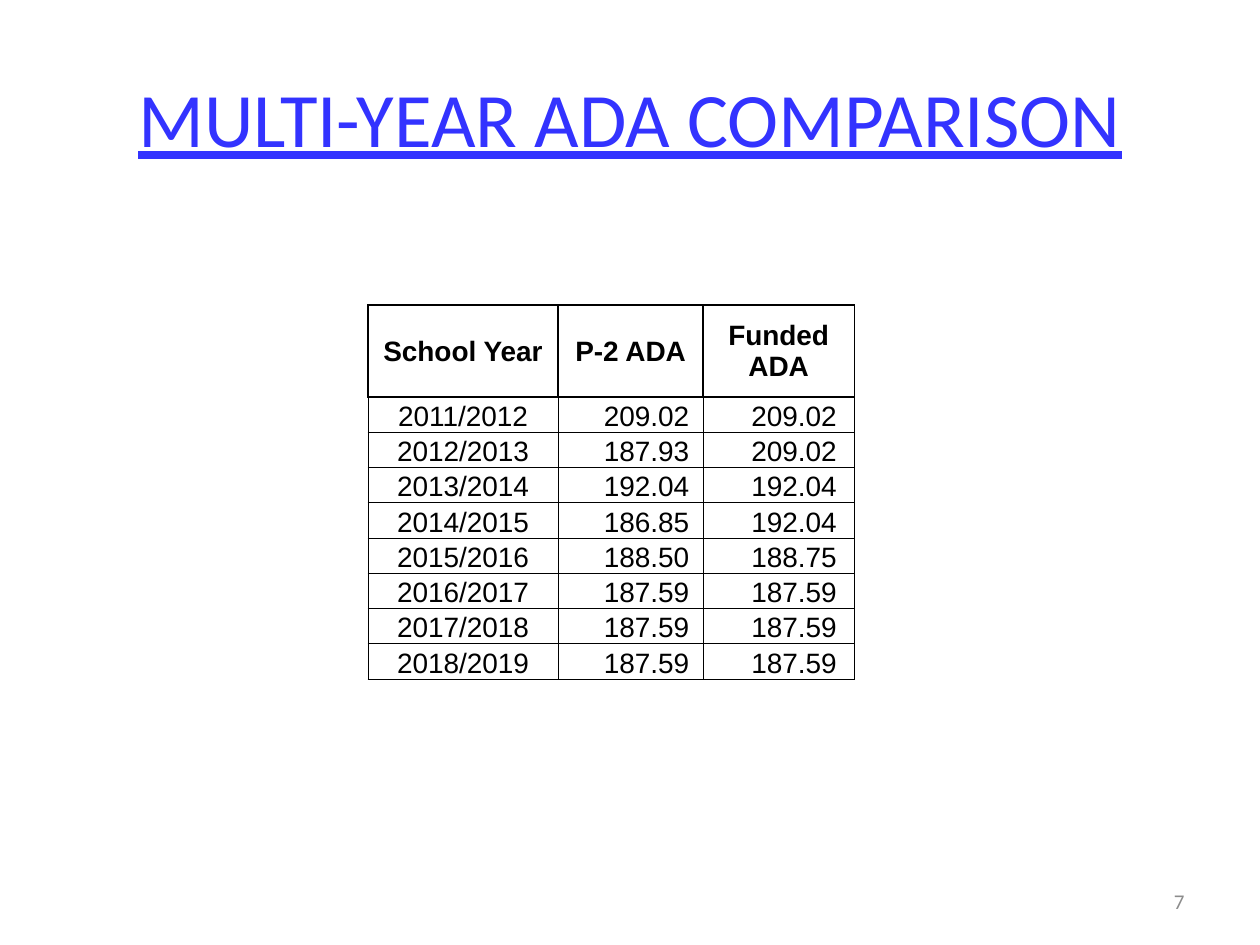
from dataclasses import dataclass

import pptx
import pptx.dml.color
import pptx.enum.text
import pptx.oxml
import pptx.oxml.ns
import pptx.util

Inches = pptx.util.Inches
Pt = pptx.util.Pt
Align = pptx.enum.text.PP_ALIGN
Anchor = pptx.enum.text.MSO_ANCHOR


@dataclass
class Style:
    size: float
    font: str = "Arial"
    color: str = "000000"
    align: Align = Align.CENTER
    bold: bool = False
    under: bool = False


@dataclass
class Column:
    head: str
    width: float
    align: Align
    right: float


YEARS = [f"{year}/{year + 1}" for year in range(2011, 2019)]
P2 = [209.02, 187.93, 192.04, 186.85, 188.50, 187.59, 187.59, 187.59]
FUNDED = [209.02, 209.02, 192.04, 192.04, 188.75, 187.59, 187.59, 187.59]
COLUMNS = [
    Column("School Year", 1.51, Align.CENTER, 0.01),
    Column("P-2 ADA", 1.15, Align.RIGHT, 0.11),
    Column("Funded ADA", 1.2, Align.RIGHT, 0.14),
]
HEAD, ROW = 0.73, 0.28


def rgb(code: str) -> pptx.dml.color.RGBColor:
    return pptx.dml.color.RGBColor.from_string(code)


def write(frame, text: str, style: Style) -> None:
    para = frame.paragraphs[0]
    para.alignment = style.align
    run = para.add_run()
    run.text = text
    form = {"name": style.font, "size": Pt(style.size),
            "bold": style.bold, "underline": style.under}
    for key, value in form.items():
        setattr(run.font, key, value)
    run.font.color.rgb = rgb(style.color)


def add_text(slide, box: tuple, text: str, style: Style) -> None:
    frame = slide.shapes.add_textbox(*map(Inches, box)).text_frame
    frame.word_wrap = True
    frame.vertical_anchor = Anchor.MIDDLE
    write(frame, text, style)


def add_edge(cell, side: str, width: float) -> None:
    """Draw one solid black border; sides are L, R, T and B."""
    space = pptx.oxml.ns.nsdecls("a")
    cell._tc.get_or_add_tcPr().append(pptx.oxml.parse_xml(
        f'<a:ln{side} {space} w="{Pt(width)}"><a:solidFill>'
        f'<a:srgbClr val="000000"/></a:solidFill></a:ln{side}>'))


def fill_cell(cell, text: str, col: Column, row: int) -> None:
    head = row == 0
    form = {
        "margin_left": Inches(0.01),
        "margin_top": Inches(0.01),
        "margin_right": Inches(0.01 if head else col.right),
        "margin_bottom": 0,
        "vertical_anchor": Anchor.MIDDLE if head else Anchor.BOTTOM,
    }
    for key, value in form.items():
        setattr(cell, key, value)
    for side in "LRTB":
        thick = head or (row == 1 and side == "T")
        add_edge(cell, side, 1 if thick else 0.5)
    cell.fill.background()
    align = Align.CENTER if head else col.align
    write(cell.text_frame, text, Style(16, align=align, bold=head))


def add_table(slide) -> None:
    rows = [[col.head for col in COLUMNS]]
    for year, p2, funded in zip(YEARS, P2, FUNDED):
        rows.append([year, f"{p2:.2f}", f"{funded:.2f}"])
    width = sum(col.width for col in COLUMNS)
    height = HEAD + ROW * len(YEARS)
    table = slide.shapes.add_table(
        len(rows), len(COLUMNS), Inches(2.92), Inches(2.42),
        Inches(width), Inches(height)).table
    table.first_row = table.horz_banding = False
    for c, col in enumerate(COLUMNS):
        table.columns[c].width = Inches(col.width)
    for r, texts in enumerate(rows):
        table.rows[r].height = Inches(ROW if r else HEAD)
        for c, text in enumerate(texts):
            fill_cell(table.cell(r, c), text, COLUMNS[c], r)


def main() -> None:
    deck = pptx.Presentation()
    deck.slide_width, deck.slide_height = Inches(10), Inches(7.5)
    slide = deck.slides.add_slide(deck.slide_layouts[6])
    add_text(slide, (0.5, 0.3, 9, 1.25), "MULTI-YEAR ADA COMPARISON",
             Style(44, "Calibri", "3333FF", under=True))
    add_text(slide, (7.17, 6.95, 2.33, 0.4), "7",
             Style(12, "Calibri", "8C8C8C", Align.RIGHT))
    add_table(slide)
    deck.save("out.pptx")


if __name__ == "__main__":
    main()
